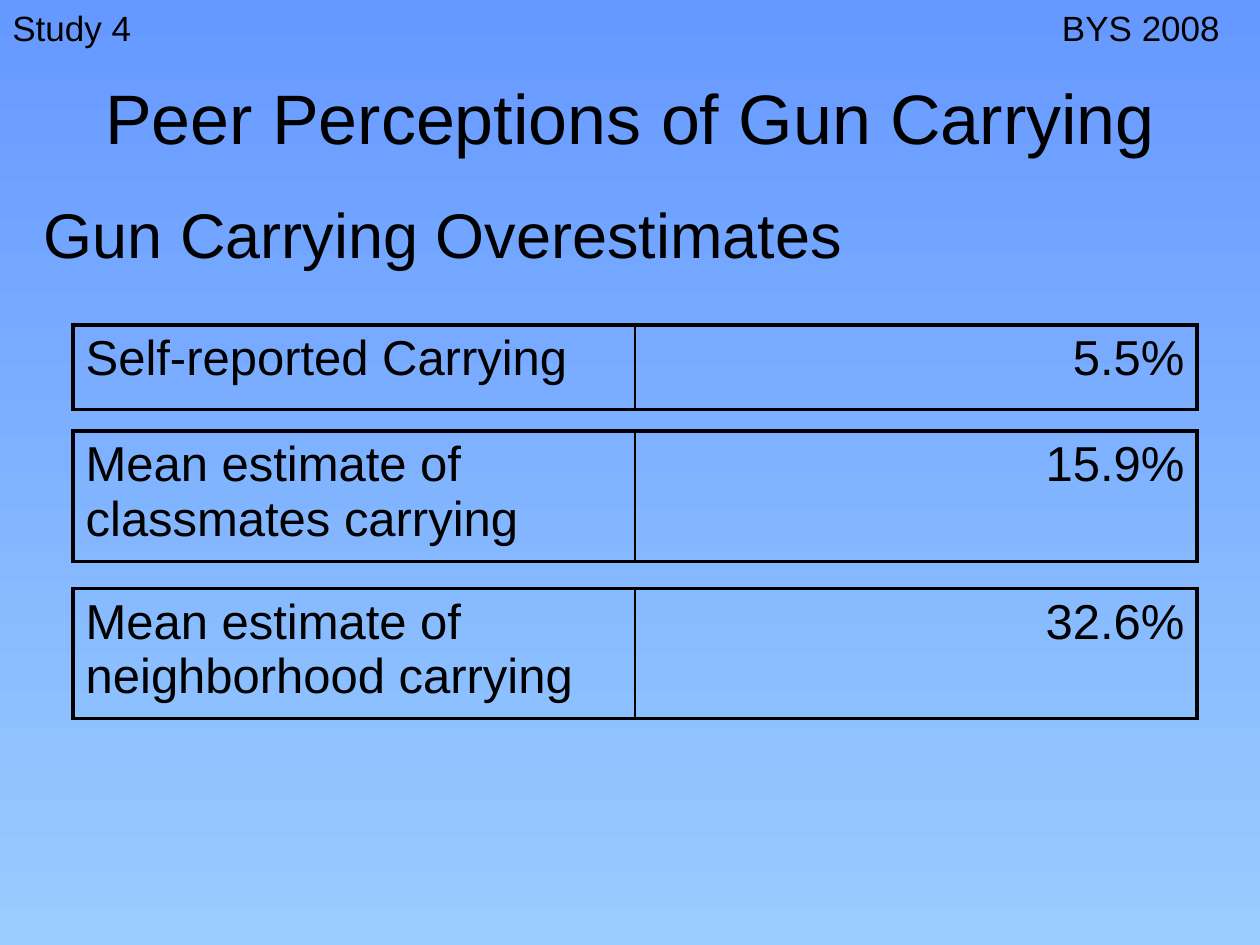
from lxml.etree import SubElement
from pptx import Presentation
from pptx.dml.color import RGBColor
from pptx.enum.text import MSO_ANCHOR, PP_ALIGN
from pptx.oxml.ns import qn
from pptx.util import Inches, Pt

WIDTH, HEIGHT = 10, 7.5


def color(hex_string):
    return RGBColor.from_string(hex_string)


class SlideBuilder:
    font = "Arial"
    ink = "000000"
    outer_line, inner_line = 2.25, 1

    def __init__(self, presentation):
        self.slide = presentation.slides.add_slide(presentation.slide_layouts[6])

    def background(self, top, bottom):
        fill = self.slide.background.fill
        fill.gradient()
        fill.gradient_angle = 270
        for stop, shade, position in zip(fill.gradient_stops, (top, bottom), (0, 1)):
            stop.color.rgb = color(shade)
            stop.position = position

    def set_text(self, text_frame, text, size, align=PP_ALIGN.LEFT):
        text_frame.text = text
        paragraph = text_frame.paragraphs[0]
        paragraph.alignment = align
        for run in paragraph.runs:
            run.font.name = self.font
            run.font.size = Pt(size)
            run.font.color.rgb = color(self.ink)

    def text(self, text, left, top, width, height, size,
             align=PP_ALIGN.LEFT, anchor=MSO_ANCHOR.TOP):
        """Place text in a box given in shares of the slide's size."""
        box = self.slide.shapes.add_textbox(
            Inches(left * WIDTH), Inches(top * HEIGHT),
            Inches(width * WIDTH), Inches(height * HEIGHT))
        box.text_frame.word_wrap = True
        box.text_frame.vertical_anchor = anchor
        self.set_text(box.text_frame, text, size, align)

    def border(self, cell, side, width):
        line = SubElement(cell._tc.get_or_add_tcPr(), qn(f"a:ln{side}"), w=str(Pt(width)))
        fill = SubElement(line, qn("a:solidFill"))
        SubElement(fill, qn("a:srgbClr"), val=self.ink)

    def result_table(self, label, value, top, height):
        """Place a framed row with a label and its right-aligned value."""
        frame = self.slide.shapes.add_table(
            1, 2, Inches(0.058 * WIDTH), Inches(top * HEIGHT),
            Inches(0.892 * WIDTH), Inches(height * HEIGHT))
        table = frame.table
        table.first_row = table.horz_banding = False
        # Row grows with its text inside the frame
        table.rows[0].height = Inches(0.67)
        frame.height = Inches(height * HEIGHT)

        outer, inner = self.outer_line, self.inner_line
        columns = ((label, PP_ALIGN.LEFT, outer, inner),
                   (value, PP_ALIGN.RIGHT, inner, outer))
        for cell, (text, align, left, right) in zip(table.rows[0].cells, columns):
            self.set_text(cell.text_frame, text, 28, align)
            for side, width in zip("LRTB", (left, right, outer, outer)):
                self.border(cell, side, width)
            cell.fill.background()


def main():
    presentation = Presentation()
    presentation.slide_width = Inches(WIDTH)
    presentation.slide_height = Inches(HEIGHT)
    builder = SlideBuilder(presentation)
    builder.background("6699FF", "99CCFF")

    # Title
    builder.text("Peer Perceptions of Gun Carrying", 0.05, 0.04, 0.9, 1 / 6, 40,
                 PP_ALIGN.CENTER, MSO_ANCHOR.MIDDLE)

    # Carrying rates
    for label, value, top, height in (
            ("Self-reported Carrying", "5.5%", 2.58, 0.67),
            ("Mean estimate of classmates carrying", "15.9%", 3.42, 1.03),
            ("Mean estimate of neighborhood carrying", "32.6%", 4.67, 1.03)):
        builder.result_table(label, value, top / HEIGHT, height / HEIGHT)

    # Subtitle and corner labels
    builder.text("Gun Carrying Overestimates", 0.025, 0.2, 0.917, 0.09, 36)
    builder.text("BYS 2008", 0.833, 0, 0.167, 0.06, 20)
    builder.text("Study 4", 0, 0, 0.133, 0.06, 20)

    presentation.save("out.pptx")


if __name__ == "__main__":
    main()
